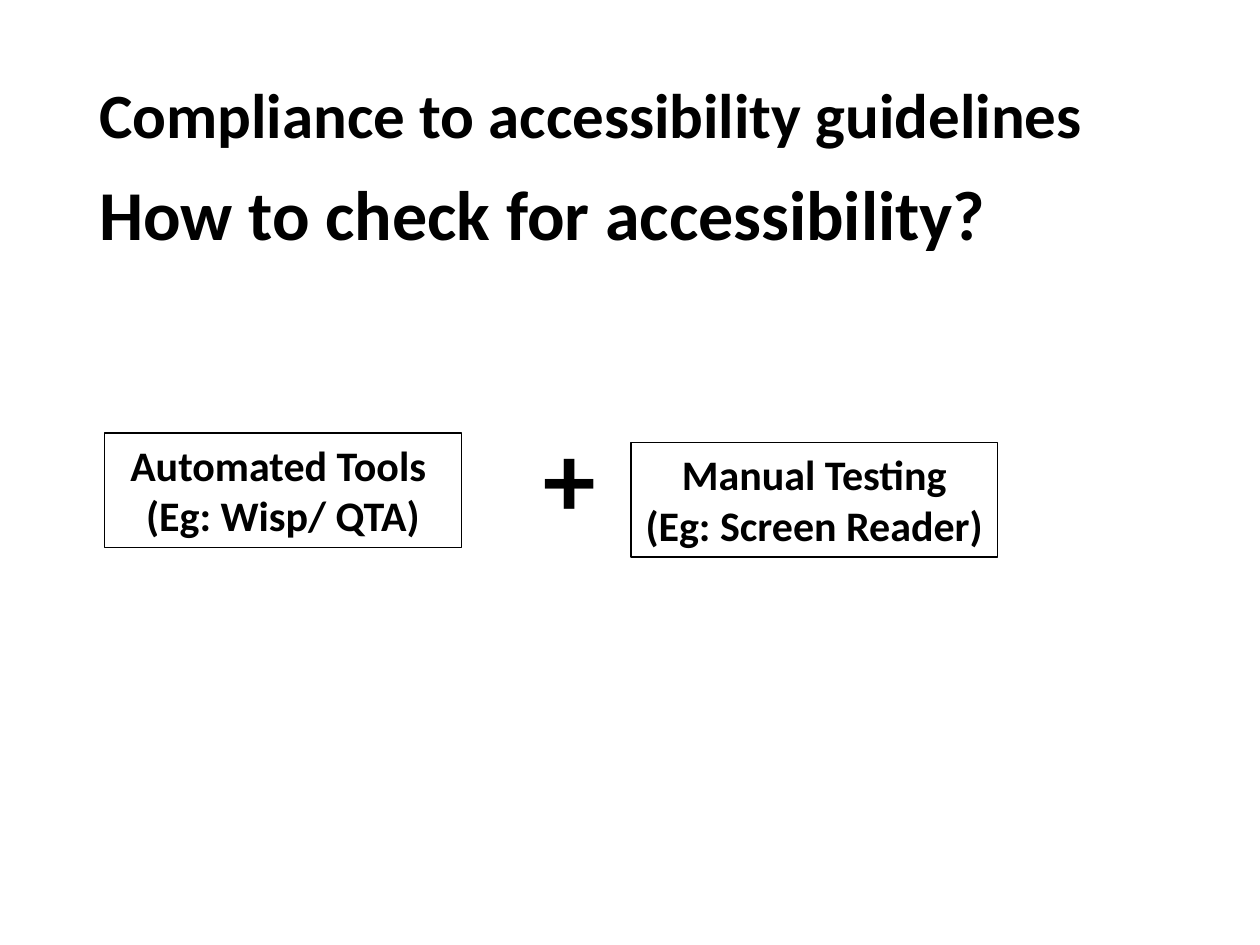
from pptx import Presentation
from pptx.dml.color import RGBColor
from pptx.enum.shapes import MSO_SHAPE
from pptx.enum.text import MSO_ANCHOR, PP_ALIGN
from pptx.util import Pt

BLACK = RGBColor(0, 0, 0)
FONT = "Calibri"


def write(tf, lines, size, align):
    """Fill a text frame with bold black lines."""
    for i, line in enumerate(lines):
        p = tf.paragraphs[0] if i == 0 else tf.add_paragraph()
        p.text = line
        p.alignment = align
        p.font.name = FONT
        p.font.size = Pt(size)
        p.font.bold = True
        p.font.color.rgb = BLACK


def add_text(slide, box, text, size, align=PP_ALIGN.LEFT):
    """Add one line of borderless text, centred vertically."""
    sp = slide.shapes.add_textbox(*map(Pt, box))
    tf = sp.text_frame
    tf.word_wrap = True
    tf.vertical_anchor = MSO_ANCHOR.MIDDLE
    write(tf, [text], size, align)
    return tf


def add_method_box(slide, box, lines, wrap=True):
    """Add an outlined box naming a testing method."""
    sp = slide.shapes.add_shape(MSO_SHAPE.RECTANGLE, *map(Pt, box))
    sp.shadow.inherit = False
    sp.fill.background()
    sp.line.color.rgb = BLACK
    sp.line.width = Pt(0.75)
    tf = sp.text_frame
    tf.word_wrap = wrap
    tf.vertical_anchor = MSO_ANCHOR.TOP
    write(tf, lines, 24, PP_ALIGN.CENTER)


def main():
    """Build the accessibility checking slide."""
    prs = Presentation()
    prs.slide_width, prs.slide_height = Pt(720), Pt(540)
    slide = prs.slides.add_slide(prs.slide_layouts[6])

    title = add_text(slide, (49.7, 15, 620.6, 104.4),
                     "Compliance to accessibility guidelines", 36)
    title.paragraphs[0].line_spacing = 0.9
    add_text(slide, (49.7, 93.4, 628.5, 56), "How to check for accessibility?", 40)
    add_method_box(slide, (59.8, 247.5, 203.8, 65.4),
                   ["Automated Tools ", "(Eg: Wisp/ QTA)"])
    add_text(slide, (295.7, 231.4, 60, 80.4), "+", 60, PP_ALIGN.CENTER)
    add_method_box(slide, (360.5, 253, 209.5, 65.4),
                   ["Manual Testing", "(Eg: Screen Reader)"], wrap=False)

    prs.save("out.pptx")


if __name__ == "__main__":
    main()
